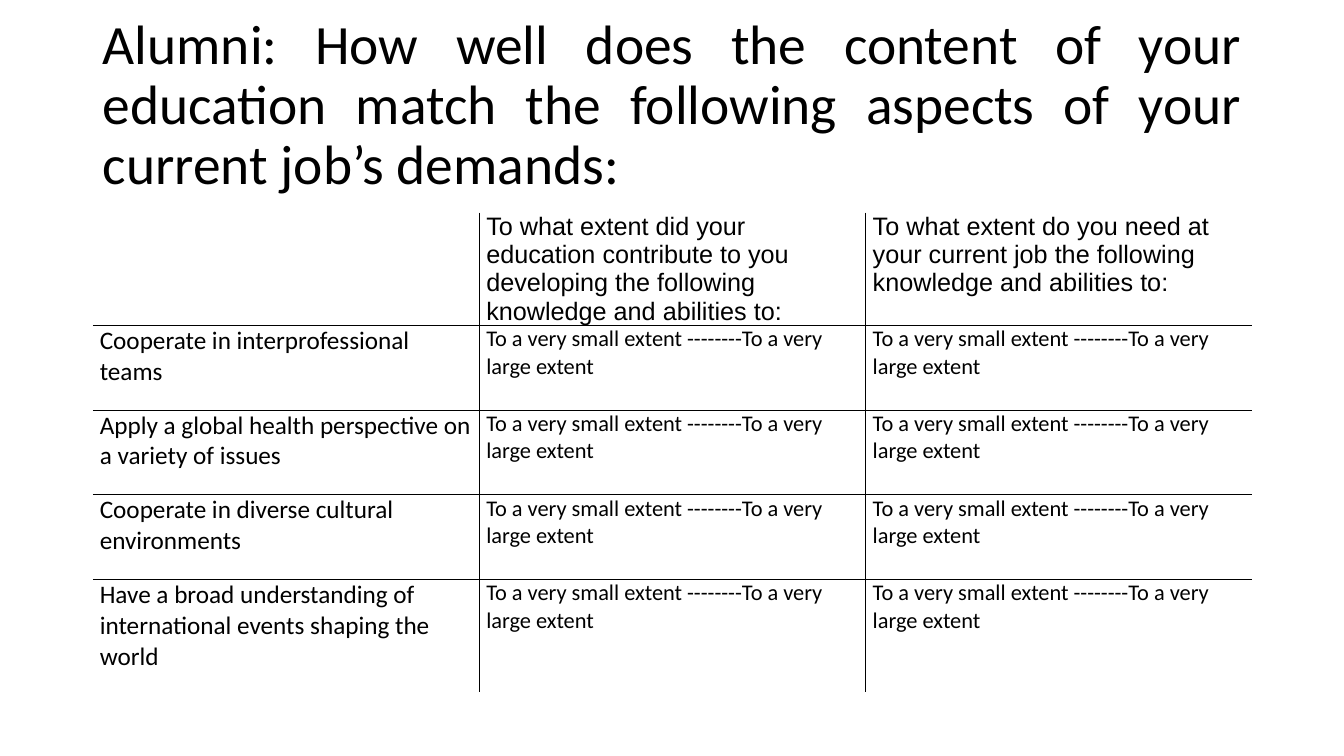
"""Build a slide with an alumni survey table on education and job demands."""
from dataclasses import dataclass

from lxml import etree
from pptx import Presentation
from pptx import util as u
from pptx.dml.color import RGBColor
from pptx.enum import text
from pptx.oxml import ns

PX = 9144
BLACK = RGBColor(0x00, 0x00, 0x00)
TITLE = ("Alumni: How well does the content of your education match "
         "the following aspects of your current job’s demands:")
SCALE = "To a very small extent --------To a very large extent"
COLS = 3


@dataclass
class Style:
    font: str
    size: float


@dataclass
class Row:
    height: int
    cells: tuple[str, str, str]
    styles: tuple[Style, Style, Style]


HEAD = Style("Arial", 18)
ITEM = Style("Calibri", 18)
REPLY = Style("Calibri", 16)


def rate(item: str, height: int = 84) -> Row:
    return Row(height, (item, SCALE, SCALE), (ITEM, REPLY, REPLY))


ROWS = [
    Row(112, ("",
              "To what extent did your education contribute to you developing "
              "the following knowledge and abilities to:",
              "To what extent do you need at your current job the following "
              "knowledge and abilities to:"), (HEAD, HEAD, HEAD)),
    rate("Cooperate in interprofessional teams"),
    rate("Apply a global health perspective on a variety of issues"),
    rate("Cooperate in diverse cultural environments"),
    rate("Have a broad understanding of international events shaping the world", 112),
]


def px(count: int) -> u.Emu:
    return u.Emu(count * PX)


def paint(para, style: Style) -> None:
    para.font.name = style.font
    para.font.size = u.Pt(style.size)
    para.font.color.rgb = BLACK


def edge(cell, side: str, shown: bool) -> None:
    props = cell._tc.get_or_add_tcPr()
    line = etree.SubElement(props, ns.qn(f"a:ln{side}"), w=str(u.Pt(1)))
    if shown:
        fill = etree.SubElement(line, ns.qn("a:solidFill"))
        etree.SubElement(fill, ns.qn("a:srgbClr"), val=str(BLACK))
    else:
        etree.SubElement(line, ns.qn("a:noFill"))


def head(slide) -> None:
    title = slide.shapes.title
    title.left, title.top, title.width, title.height = map(px, (92, 33, 1150, 145))
    frame = title.text_frame
    frame.text = TITLE
    frame.word_wrap = True
    frame.auto_size = text.MSO_AUTO_SIZE.NONE
    frame.vertical_anchor = text.MSO_ANCHOR.MIDDLE
    para = frame.paragraphs[0]
    para.alignment = text.PP_ALIGN.JUSTIFY
    para.line_spacing = 0.9
    paint(para, Style("Calibri", 39.6))


def grid(slide) -> None:
    high = sum(row.height for row in ROWS)
    table = slide.shapes.add_table(len(ROWS), COLS, px(92), px(211),
                                   px(1150), px(high)).table
    table.first_row = table.horz_banding = False
    for r, row in enumerate(ROWS):
        table.rows[r].height = px(row.height)
        for c, (words, style) in enumerate(zip(row.cells, row.styles)):
            cell = table.cell(r, c)
            cell.text = words
            cell.margin_left = cell.margin_right = px(7)
            cell.margin_top = cell.margin_bottom = 0
            paint(cell.text_frame.paragraphs[0], style)
            edge(cell, "L", c > 0)
            edge(cell, "R", c < COLS - 1)
            edge(cell, "T", r > 0)
            edge(cell, "B", r < len(ROWS) - 1)
            cell.fill.background()


def main() -> None:
    deck = Presentation()
    deck.slide_width, deck.slide_height = px(1333), px(750)
    slide = deck.slides.add_slide(deck.slide_layouts[5])
    head(slide)
    grid(slide)
    deck.save("out.pptx")


if __name__ == "__main__":
    main()
